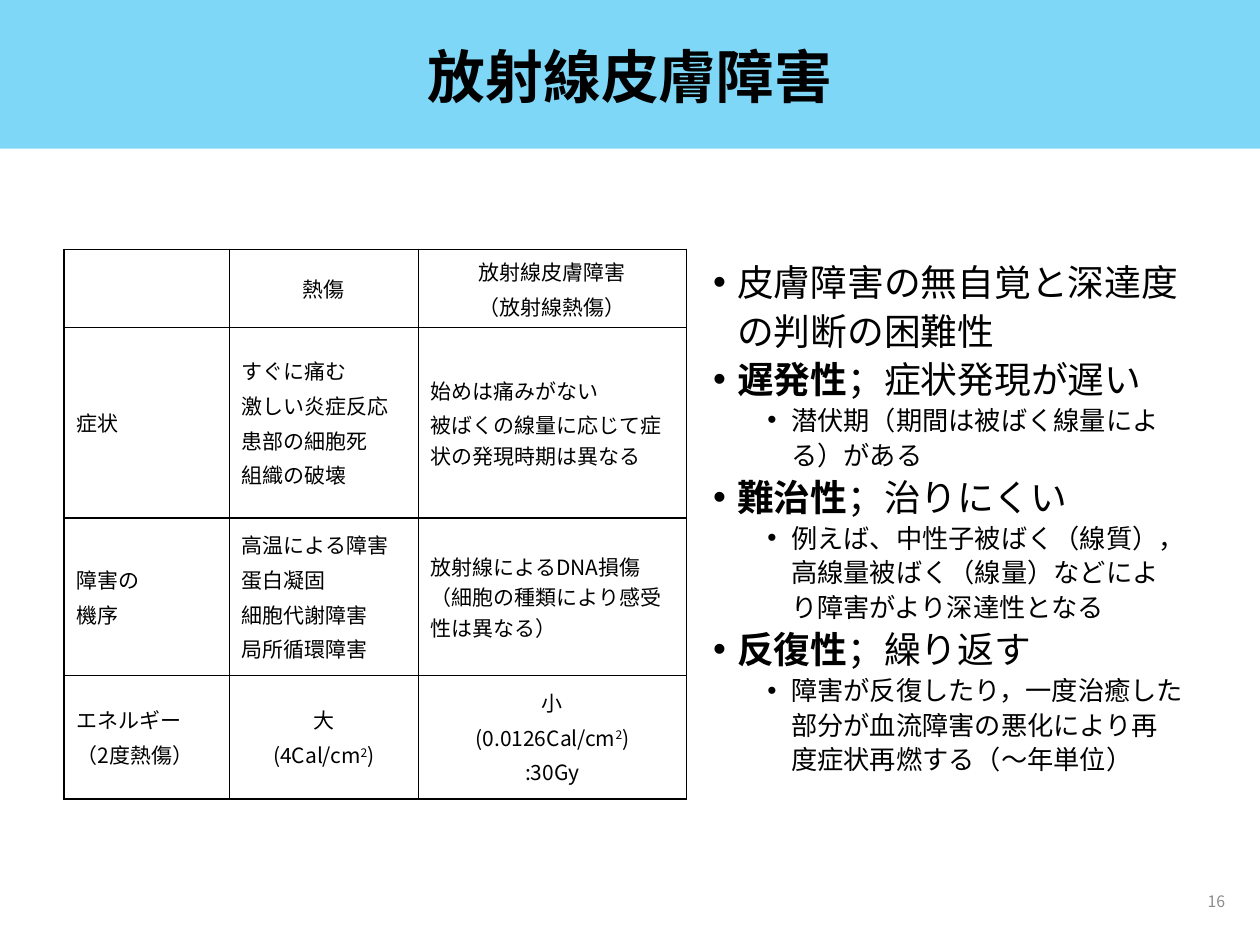
"""Build a slide comparing burns with radiation skin injury."""
import pptx
import pptx.dml.color
import pptx.enum.shapes
import pptx.enum.text
import pptx.oxml
import pptx.oxml.ns
import pptx.util

Inches = pptx.util.Inches
Pt = pptx.util.Pt
Align = pptx.enum.text.PP_ALIGN
Anchor = pptx.enum.text.MSO_ANCHOR
FONT = "Noto Sans CJK JP"
BLACK = pptx.dml.color.RGBColor(0x00, 0x00, 0x00)
GRAY = pptx.dml.color.RGBColor(0x8C, 0x8C, 0x8C)
SKY = pptx.dml.color.RGBColor(0x00, 0xB0, 0xF0)
NAMESPACE = pptx.oxml.ns.nsdecls("a")


def add_text(para, text, size=12, color=BLACK, bold=False, raised=False):
    span = para.add_run()
    span.text = text
    span.font.name = FONT
    span.font.size = Pt(size)
    span.font.bold = bold
    span.font.color.rgb = color
    props = span.font._element
    props.append(pptx.oxml.parse_xml(f'<a:ea {NAMESPACE} typeface="{FONT}"/>'))
    if raised:
        props.set("baseline", "30000")


def add_paragraph(frame, number):
    return frame.add_paragraph() if number else frame.paragraphs[0]


deck = pptx.Presentation()
deck.slide_width, deck.slide_height = Inches(10), Inches(7.5)
page = deck.slides.add_slide(deck.slide_layouts[1])
title, body = page.placeholders

band = page.shapes.add_shape(
    pptx.enum.shapes.MSO_SHAPE.RECTANGLE, 0, 0, deck.slide_width, Inches(1.18))
band.shadow.inherit = False
band.fill.solid()
band.fill.fore_color.rgb = SKY
band.line.fill.background()
tint = band._element.spPr.find(".//" + pptx.oxml.ns.qn("a:srgbClr"))
tint.append(pptx.oxml.parse_xml(f'<a:alpha {NAMESPACE} val="50000"/>'))
page.shapes._spTree.insert(2, band._element)

title.left, title.top, title.width, title.height = map(Inches, (0.69, 0.21, 8.62, 0.85))
title.text_frame.vertical_anchor = Anchor.MIDDLE
heading = title.text_frame.paragraphs[0]
heading.alignment = Align.CENTER
heading.line_spacing = 0.9
add_text(heading, "放射線皮膚障害", size=33, bold=True)

POINTS = [
    (0, "", "皮膚障害の無自覚と深達度の判断の困難性"),
    (0, "遅発性", "；症状発現が遅い"),
    (2, "", "潜伏期（期間は被ばく線量による）がある"),
    (0, "難治性", "；治りにくい"),
    (2, "", "例えば、中性子被ばく（線質），高線量被ばく（線量）などにより障害がより深達性となる"),
    (0, "反復性", "；繰り返す"),
    (2, "", "障害が反復したり，一度治癒した部分が血流障害の悪化により再度症状再燃する（～年単位）"),
]
body.left, body.top, body.width, body.height = map(Inches, (5.45, 1.98, 4.05, 4.36))
body.text_frame.auto_size = pptx.enum.text.MSO_AUTO_SIZE.NONE
for number, (level, term, detail) in enumerate(POINTS):
    para = add_paragraph(body.text_frame, number)
    para.level = level
    para.line_spacing = 1.1
    para.space_before = Pt(0)
    props = para._p.get_or_add_pPr()
    props.set("marL", str(Inches(0.73 if level else 0.3)))
    props.set("indent", str(Inches(-0.19)))
    for bullet in ('<a:buFont {} typeface="Arial"/>', '<a:buChar {} char="•"/>'):
        props.append(pptx.oxml.parse_xml(bullet.format(NAMESPACE)))
    size = 15 if level else 21
    if term:
        add_text(para, term, size=size, bold=True)
    add_text(para, detail, size=size)

COLUMNS = [1.31, 1.5, 2.13]
ROWS = [0.62, 1.51, 1.25, 0.98]
CELLS = [
    [[], ["熱傷"], ["放射線皮膚障害", "（放射線熱傷）"]],
    [["症状"],
     ["すぐに痛む", "激しい炎症反応", "患部の細胞死", "組織の破壊"],
     ["始めは痛みがない", "被ばくの線量に応じて症状の発現時期は異なる"]],
    [["障害の", "機序"],
     ["高温による障害", "蛋白凝固", "細胞代謝障害", "局所循環障害"],
     ["放射線によるDNA損傷（細胞の種類により感受性は異なる）"]],
    [["エネルギー", "（2度熱傷）"],
     ["大", "(4Cal/cm^2^)"],
     ["小", "(0.0126Cal/cm^2^)", ":30Gy"]],
]
table = page.shapes.add_table(
    len(ROWS), len(COLUMNS), Inches(0.51), Inches(1.98),
    Inches(sum(COLUMNS)), Inches(sum(ROWS))).table
table.first_row = table.horz_banding = False
for column, width in zip(table.columns, COLUMNS):
    column.width = Inches(width)
for row, height in zip(table.rows, ROWS):
    row.height = Inches(height)

for r, row in enumerate(CELLS):
    for c, lines in enumerate(row):
        cell = table.cell(r, c)
        cell.vertical_anchor = Anchor.MIDDLE
        props = cell._tc.get_or_add_tcPr()
        for side in ("lnL", "lnR", "lnT", "lnB"):
            props.append(pptx.oxml.parse_xml(
                f'<a:{side} {NAMESPACE} w="{Pt(1)}"><a:solidFill>'
                f'<a:srgbClr val="{BLACK}"/></a:solidFill></a:{side}>'))
        cell.fill.background()
        centered = c > 0 and r in (0, len(ROWS) - 1)
        for number, line in enumerate(lines):
            para = add_paragraph(cell.text_frame, number)
            para.alignment = Align.CENTER if centered else Align.LEFT
            para.space_before = Pt(2.4)
            for part, text in enumerate(line.split("^")):
                add_text(para, text, raised=part == 1)

number_box = page.shapes.add_textbox(*map(Inches, (7.57, 6.95, 2.25, 0.4)))
number_box.text_frame.word_wrap = True
number_box.text_frame.vertical_anchor = Anchor.MIDDLE
number_para = number_box.text_frame.paragraphs[0]
number_para.alignment = Align.RIGHT
add_text(number_para, "16", size=9, color=GRAY)

deck.save("out.pptx")
